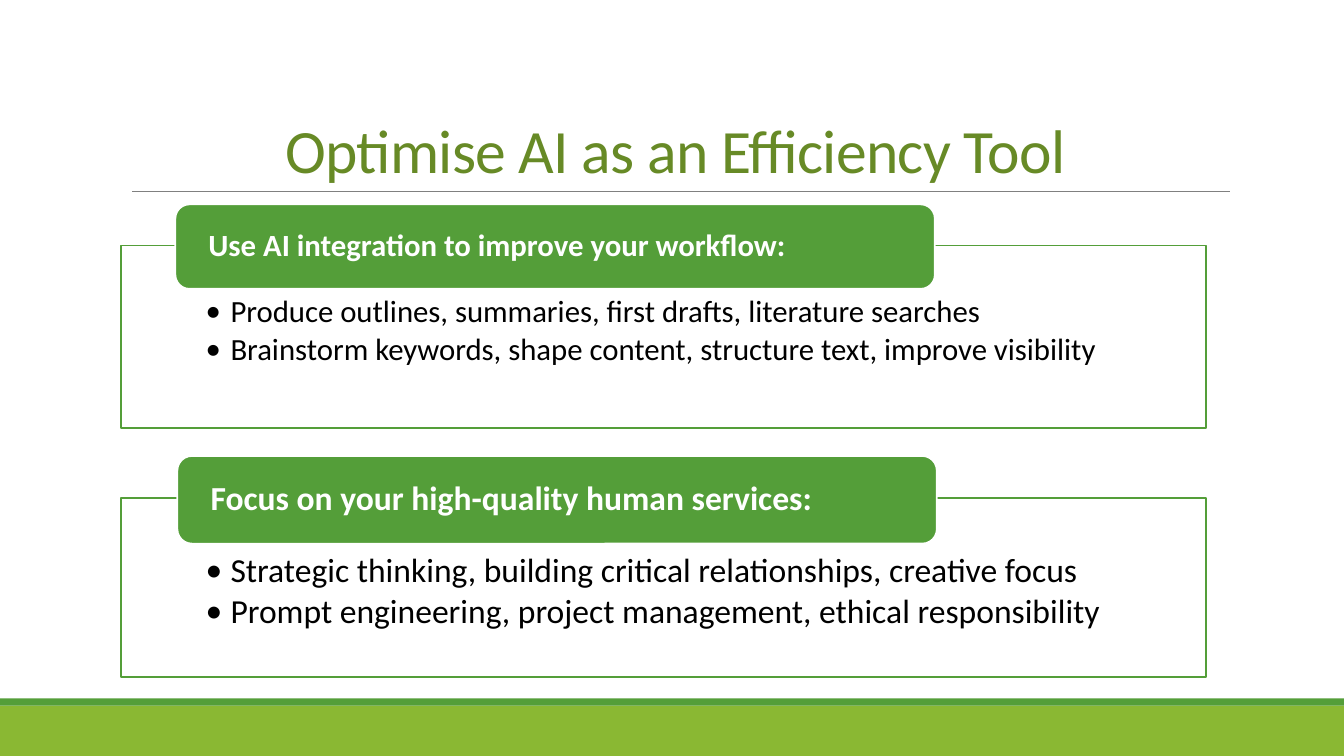
from lxml import etree
from pptx import Presentation
from pptx import util as u
from pptx.dml.color import RGBColor
from pptx.enum import shapes, text
from pptx.oxml.ns import qn

COLOURS = {
    "lime": "8AB833",
    "green": "549E39",
    "olive": "678A26",
    "grey": "808080",
    "white": "FFFFFF",
    "black": "000000",
}
WIDTH, HEIGHT = 33.87, 19.05
PANEL_LEFT, PANEL_WIDTH = 3.05, 27.35
HEADING_WIDTH = 19.14

# Heading, points, size, panel (top, height), heading (left, top, height), text inset
SECTIONS = [
    ("Use AI integration to improve your workflow:",
     ["Produce outlines, summaries, first drafts, literature searches",
      "Brainstorm keywords, shape content, structure text, improve visibility"],
     22, (6.19, 4.6), (4.42, 5.15, 2.13), 1.28),
    ("Focus on your high-quality human services:",
     ["Strategic thinking, building critical relationships, creative focus",
      "Prompt engineering, project management, ethical responsibility"],
     24, (12.55, 4.51), (4.47, 11.49, 2.21), 1.4),
]


def rgb(name):
    return RGBColor.from_string(COLOURS[name])


def add_block(slide, kind, box, fill, line=None):
    block = slide.shapes.add_shape(kind, *map(u.Cm, box))
    block.shadow.inherit = False
    block.fill.solid()
    block.fill.fore_color.rgb = rgb(fill)
    if line:
        block.line.color.rgb = rgb(line)
        block.line.width = u.Pt(1.25)
    else:
        block.line.fill.background()
    return block


def set_frame(frame, anchor, margins):
    frame.word_wrap = True
    frame.auto_size = text.MSO_AUTO_SIZE.NONE
    frame.vertical_anchor = anchor
    (frame.margin_left, frame.margin_top,
     frame.margin_right, frame.margin_bottom) = map(u.Cm, margins)


def style(paragraph, size, colour, bold=False, align=text.PP_ALIGN.LEFT,
          spacing=0.9, after=0):
    paragraph.alignment = align
    paragraph.line_spacing = spacing
    paragraph.space_before = u.Pt(0)
    paragraph.space_after = u.Pt(after)
    font = paragraph.font
    font.name, font.size, font.bold = "Calibri", u.Pt(size), bold
    font.color.rgb = rgb(colour)


def add_bullet(paragraph):
    props = paragraph._p.get_or_add_pPr()
    props.set("marL", str(u.Cm(0.63)))
    props.set("indent", str(-u.Cm(0.63)))
    defaults = props.find(qn("a:defRPr"))
    defaults.addprevious(etree.Element(qn("a:buFont"), typeface="Calibri"))
    defaults.addprevious(etree.Element(qn("a:buChar"), char="•"))


def add_footer_band(slide, top):
    strip = 0.18
    rectangle = shapes.MSO_SHAPE.RECTANGLE
    add_block(slide, rectangle, (0, top + strip, WIDTH, HEIGHT - top - strip), "lime")
    add_block(slide, rectangle, (0, top, WIDTH, strip), "green")


def add_title(slide, left, top, width, height):
    # Rule under the title
    bottom = top + height
    rule = slide.shapes.add_connector(
        shapes.MSO_CONNECTOR.STRAIGHT,
        *map(u.Cm, (left + 0.28, bottom, left + 27.95, bottom)))
    rule.line.color.rgb = rgb("grey")
    rule.line.width = u.Pt(0.5)
    etree.SubElement(rule._element.spPr, qn("a:effectLst"))

    # Title text
    title = slide.shapes.title
    title.left, title.top, title.width, title.height = map(
        u.Cm, (left, top, width, height))
    frame = title.text_frame
    frame.text = "Optimise AI as an Efficiency Tool"
    set_frame(frame, text.MSO_ANCHOR.BOTTOM, (0.25, 0.13, 0.25, 0.13))
    heading = frame.paragraphs[0]
    style(heading, 44, "olive", align=text.PP_ALIGN.CENTER, spacing=0.85)
    heading._p.pPr.find(qn("a:defRPr")).set("spc", "-50")


def add_section(slide, heading, points, size, panel_span, heading_place, inset):
    # Outlined panel with bullets
    top, height = panel_span
    panel = add_block(slide, shapes.MSO_SHAPE.RECTANGLE,
                      (PANEL_LEFT, top, PANEL_WIDTH, height), "white", "green")
    alpha = etree.Element(qn("a:alpha"), val="90000")
    panel._element.spPr.find(qn("a:solidFill"))[0].append(alpha)
    frame = panel.text_frame
    set_frame(frame, text.MSO_ANCHOR.TOP, (2.13, inset, 2.13, 0.45))
    frame.text = "\n".join(points)
    for point in frame.paragraphs:
        style(point, size, "black", after=0.15 * size)
        add_bullet(point)

    # Heading over the panel's top edge
    left, top, height = heading_place
    tab = add_block(slide, shapes.MSO_SHAPE.ROUNDED_RECTANGLE,
                    (left, top, HEADING_WIDTH, height), "green", "white")
    set_frame(tab.text_frame, text.MSO_ANCHOR.MIDDLE, (0.73, 0, 0.73, 0))
    tab.text_frame.text = heading
    style(tab.text_frame.paragraphs[0], size, "white", bold=True)


def main():
    deck = Presentation()
    deck.slide_width, deck.slide_height = u.Cm(WIDTH), u.Cm(HEIGHT)
    slide = deck.slides.add_slide(deck.slide_layouts.get_by_name("Title Only"))
    add_footer_band(slide, 17.6)
    add_title(slide, 3.05, 0.79, 27.94, 4.04)
    for section in SECTIONS:
        add_section(slide, *section)
    deck.save("out.pptx")


if __name__ == "__main__":
    main()
